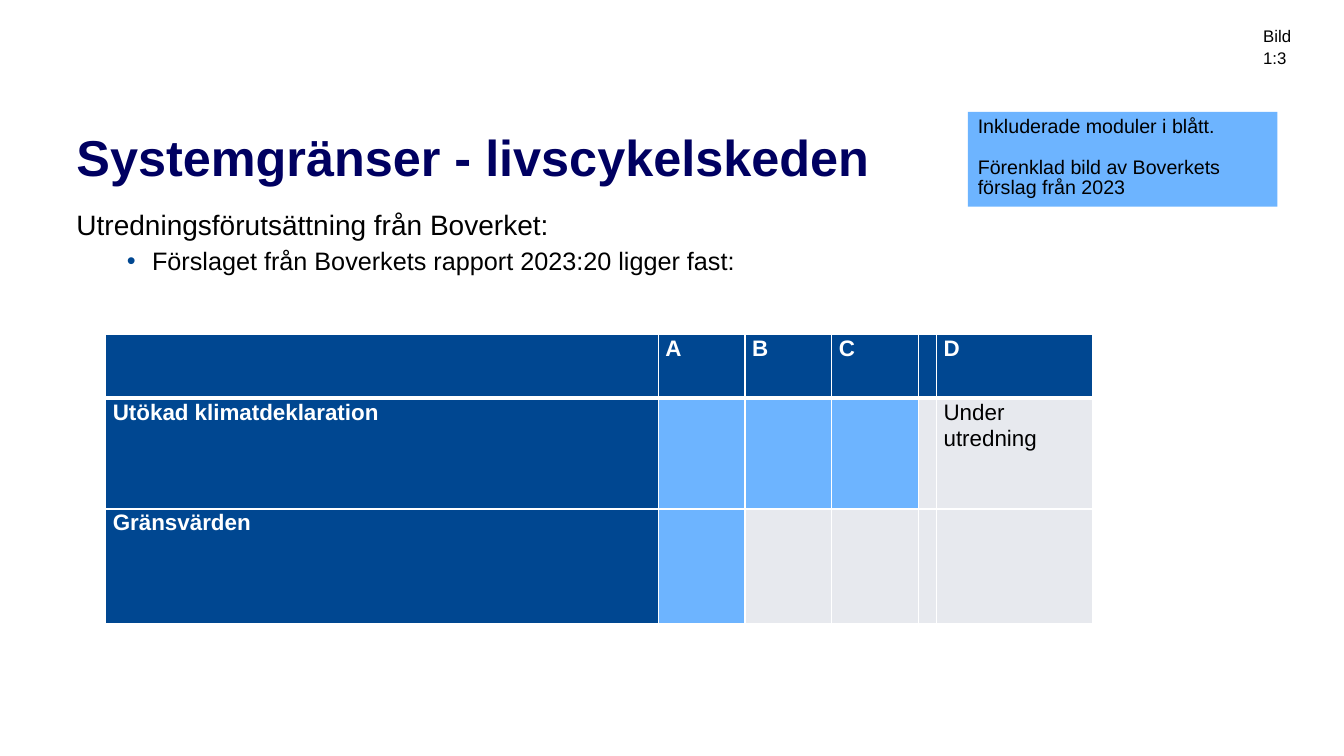
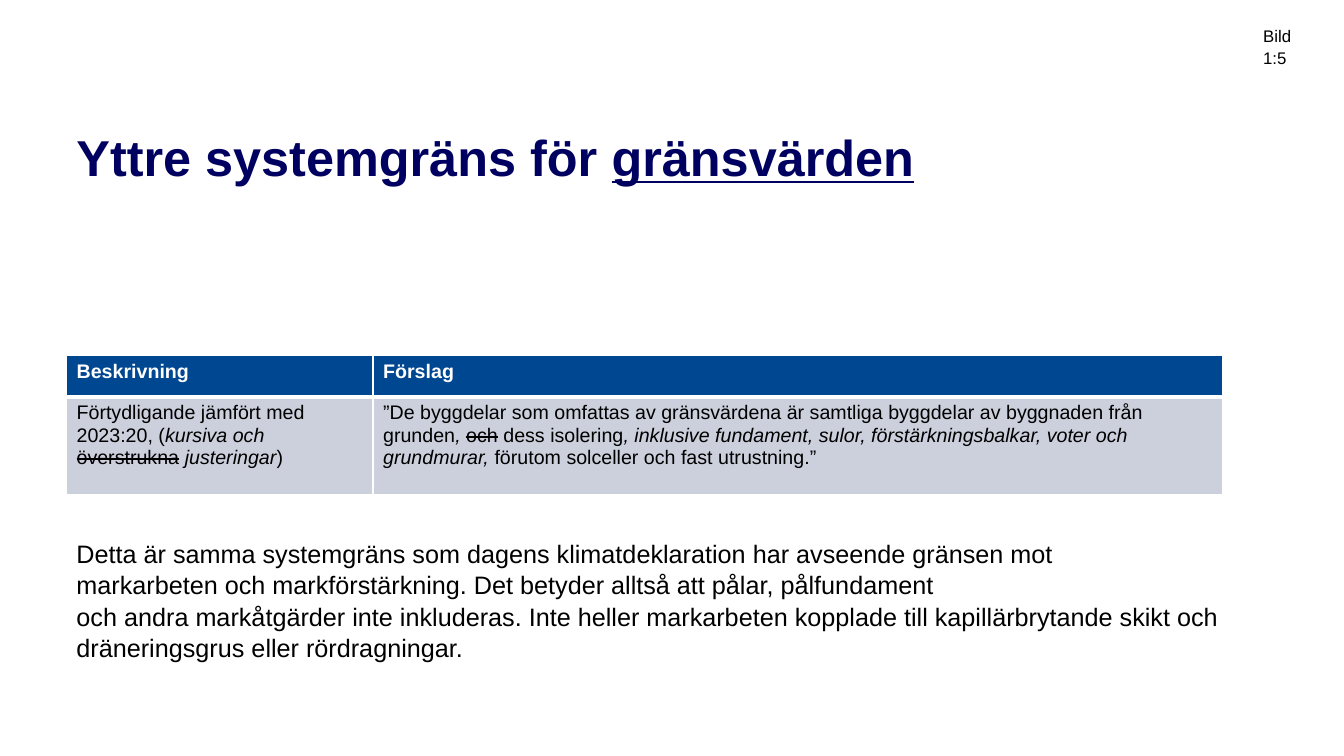
from lxml import etree
from pptx import Presentation
from pptx.dml.color import RGBColor
from pptx.enum.shapes import MSO_SHAPE
from pptx.enum.text import MSO_ANCHOR, PP_ALIGN
from pptx.oxml.ns import qn
from pptx.util import Emu, Pt

RECT = MSO_SHAPE.RECTANGLE
TOP = MSO_ANCHOR.TOP
LEFT = PP_ALIGN.LEFT

# Shared look
PX = 9144  # 100 px to the inch
FONT = "Arial"
TITLE, DARK, LIGHT = "000061", "004791", "6DB4FF"
GREY, LAVENDER = "E7E9EE", "CCCFDC"
WHITE, BLACK = "FFFFFF", "000000"
TITLE_BOX = (66, 120, 1202, 62)
LABEL_BOX = (1243, 19, 73, 30)

# Content: a text is a list of (words, marks), marks being i, u or s
STAGES = {
    "label": "Bild 1:3",
    "title": [("Systemgränser - livscykelskeden", "")],
    "lead": "Utredningsförutsättning från Boverket:",
    "point": "Förslaget från Boverkets rapport 2023:20 ligger fast:",
    "legend": ["Inkluderade moduler i blått.",
               "Förenklad bild av Boverkets förslag från 2023"],
    "modules": ["", "A", "B", "C", "", "D"],
    # name, included modules, remark under the last module
    "scopes": [("Utökad klimatdeklaration", "ABC", "Under utredning"),
               ("Gränsvärden", "A", "")],
    "columns": [548, 86, 86, 86, 18, 155],
    "rows": [63, 110, 114],
}
BOUNDARY = {
    "label": "Bild 1:5",
    "title": [("Yttre systemgräns för ", ""), ("gränsvärden", "u")],
    "header": ["Beskrivning", "Förslag"],
    "proposal": [
        [("Förtydligande jämfört med 2023:20, (", ""), ("kursiva och ", "i"),
         ("överstrukna", "s"), (" justeringar", "i"), (")", "")],
        [("”De byggdelar som omfattas av gränsvärdena är samtliga byggdelar "
          "av byggnaden från grunden", ""),
         (", ", "i"), ("och", "s"), (" dess isolering", ""),
         (", inklusive fundament, sulor, förstärkningsbalkar, voter och "
          "grundmurar,", "i"),
         (" förutom solceller och fast utrustning.”", "")],
    ],
    "columns": [304, 843],
    "rows": [41, 97],
    "comment": [
        "Detta är samma systemgräns som dagens klimatdeklaration har avseende gränsen mot",
        "markarbeten och markförstärkning. Det betyder alltså att pålar, pålfundament",
        "och andra markåtgärder inte inkluderas. Inte heller markarbeten kopplade "
        "till kapillärbrytande skikt och",
        "dräneringsgrus eller rördragningar.",
    ],
}


def px(length):
    return Emu(length * PX)


def rgb(colour):
    return RGBColor.from_string(colour)


def plain(words):
    return [(words, "")] if words else []


# Text
def write(paragraph, runs, size, colour=BLACK, bold=False, spacing=None):
    paragraph.alignment = LEFT
    if spacing:
        paragraph.line_spacing = spacing
    for words, marks in runs:
        run = paragraph.add_run()
        run.text = words
        font = run.font
        font.name, font.size, font.bold = FONT, Pt(size), bold
        font.color.rgb = rgb(colour)
        font.italic = "i" in marks
        font.underline = "u" in marks
        if "s" in marks:
            run._r.get_or_add_rPr().set("strike", "sngStrike")


def write_all(frame, texts, size, spacing=None):
    frame.word_wrap = True
    for number, words in enumerate(texts):
        paragraph = frame.add_paragraph() if number else frame.paragraphs[0]
        write(paragraph, plain(words), size, spacing=spacing)


def text_frame(slide, box):
    frame = slide.shapes.add_textbox(*map(px, box)).text_frame
    frame.word_wrap = True
    frame.vertical_anchor = TOP
    return frame


def add_bullet(paragraph, left, hanging, colour):
    props = paragraph._p.get_or_add_pPr()
    props.set("marL", str(px(left)))
    props.set("indent", str(px(-hanging)))
    bullet_colour = etree.SubElement(props, qn("a:buClr"))
    etree.SubElement(bullet_colour, qn("a:srgbClr"), val=colour)
    etree.SubElement(props, qn("a:buFont"), typeface=FONT)
    etree.SubElement(props, qn("a:buChar"), char="•")


# Tables
def add_borders(cell, top, bottom):
    props = cell._tc.get_or_add_tcPr()
    for side, width in (("L", 1), ("R", 1), ("T", top), ("B", bottom)):
        line = etree.SubElement(props, qn(f"a:ln{side}"), w=str(Pt(width)))
        fill = etree.SubElement(line, qn("a:solidFill"))
        etree.SubElement(fill, qn("a:srgbClr"), val=WHITE)


def add_table(slide, left, top, columns, rows, cells, size,
              margins=(10, 5), spacing=None, space_after=0):
    """Each cell is (runs, fill); dark cells get bold white text."""
    table = slide.shapes.add_table(
        len(rows), len(columns), px(left), px(top),
        px(sum(columns)), px(sum(rows))).table
    for column, width in zip(table.columns, columns):
        column.width = px(width)
    for r, height in enumerate(rows):
        table.rows[r].height = px(height)
        for c, (runs, fill) in enumerate(cells[r]):
            cell = table.cell(r, c)
            cell.margin_left = cell.margin_right = px(margins[0])
            cell.margin_top = cell.margin_bottom = px(margins[1])
            add_borders(cell, 3 if r == 1 else 1, 3 if r == 0 else 1)
            cell.fill.solid()
            cell.fill.fore_color.rgb = rgb(fill)
            dark = fill == DARK
            paragraph = cell.text_frame.paragraphs[0]
            paragraph.space_after = Pt(space_after)
            write(paragraph, runs, size, WHITE if dark else BLACK, dark, spacing)


# Slides
def start_slide(deck, content):
    slide = deck.slides.add_slide(deck.slide_layouts[6])
    title = text_frame(slide, TITLE_BOX)
    title.margin_top = px(12)
    write(title.paragraphs[0], content["title"], 36, TITLE, True, 0.9)
    write_all(text_frame(slide, LABEL_BOX), [content["label"]], 12, 1.09)
    return slide


def build_stages(deck):
    slide = start_slide(deck, STAGES)

    # Introduction
    intro = text_frame(slide, (66, 205, 1202, 140))
    write(intro.paragraphs[0], plain(STAGES["lead"]), 20, spacing=0.9)
    point = intro.add_paragraph()
    add_bullet(point, 75, 25, DARK)
    point.space_before = Pt(5)
    write(point, plain(STAGES["point"]), 18, spacing=0.9)

    # Modules by scope
    modules = STAGES["modules"]
    cells = [[(plain(module), DARK) for module in modules]]
    for name, included, remark in STAGES["scopes"]:
        row = [(plain(name), DARK)]
        for module in modules[1:]:
            fill = LIGHT if module and module in included else GREY
            row.append((plain(remark if module == modules[-1] else ""), fill))
        cells.append(row)
    add_table(slide, 105, 332, STAGES["columns"], STAGES["rows"], cells, 16,
              margins=(7, 0), spacing=1.07, space_after=8)

    # Legend
    legend = slide.shapes.add_shape(RECT, *map(px, (960, 111, 307, 94)))
    legend.shadow.inherit = False
    legend.fill.solid()
    legend.fill.fore_color.rgb = rgb(LIGHT)
    legend.line.fill.background()
    frame = legend.text_frame
    frame.vertical_anchor = TOP
    write_all(frame, STAGES["legend"], 14, Pt(14.6))
    frame.paragraphs[1].space_before = Pt(14.6)


def build_boundary(deck):
    slide = start_slide(deck, BOUNDARY)
    cells = [[(plain(words), DARK) for words in BOUNDARY["header"]],
             [(runs, LAVENDER) for runs in BOUNDARY["proposal"]]]
    add_table(slide, 66, 353, BOUNDARY["columns"], BOUNDARY["rows"], cells, 14)
    write_all(text_frame(slide, (66, 528, 1175, 131)),
              BOUNDARY["comment"], 18, 1.04)


def main():
    deck = Presentation()
    deck.slide_width, deck.slide_height = px(1333), px(750)
    build_stages(deck)
    build_boundary(deck)
    deck.save("out.pptx")


if __name__ == "__main__":
    main()
